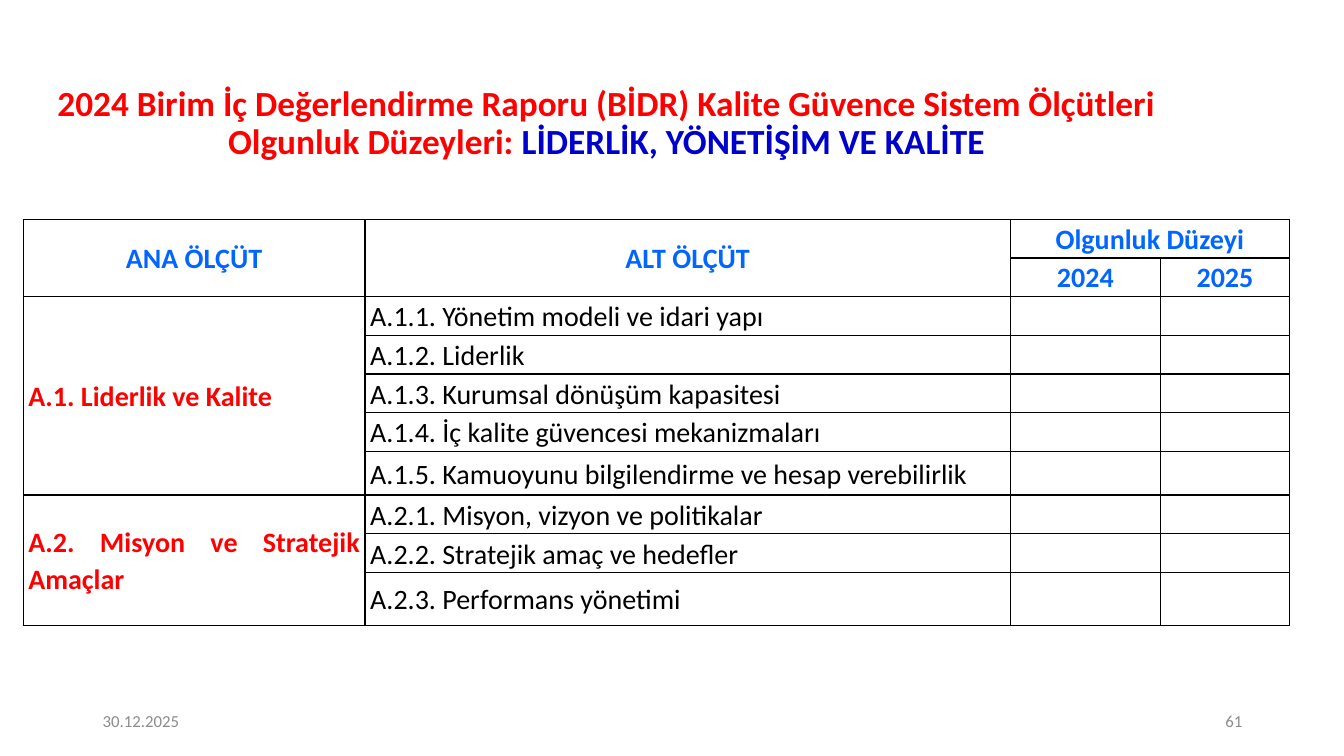
from typing import NamedTuple

from lxml import etree
from pptx import Presentation
from pptx import util as u
from pptx.dml.color import RGBColor
from pptx.enum import text as t
from pptx.oxml import ns

COLORS = {"red": "FF0000", "navy": "0000CC", "blue": "0066FF",
          "black": "000000", "grey": "8C8C8C"}
FONT = "Calibri"
WIDTH, HEIGHT = u.Inches(13.33), u.Inches(7.5)
CENTER, RIGHT, JUSTIFY, LEFT = (t.PP_ALIGN.CENTER, t.PP_ALIGN.RIGHT,
                                t.PP_ALIGN.JUSTIFY, t.PP_ALIGN.LEFT)


class Run(NamedTuple):
    text: str
    color: str
    size: float
    bold: bool = False


class Label(NamedTuple):
    """Text box; place is left, top, width, height in percent of the slide."""
    place: tuple[float, float, float, float]
    runs: list[Run]
    align: t.PP_ALIGN
    spacing: float = 1.0


class Criterion(NamedTuple):
    name: str
    items: list[str]


class Cell(NamedTuple):
    row: int
    col: int
    text: str
    color: str = "blue"
    bold: bool = True
    align: t.PP_ALIGN = CENTER
    rows: int = 1
    cols: int = 1


LABELS = [
    Label((2.7, 11.33, 84.85, 10.27),
          [Run("2024 Birim İç Değerlendirme Raporu (BİDR) Kalite Güvence Sistem "
               "Ölçütleri Olgunluk Düzeyleri: ", "red", 25.2, True),
           Run("LİDERLİK, YÖNETİŞİM VE KALİTE", "navy", 25.2, True)], CENTER, 0.9),
    Label((6.9, 92.67, 22.5, 5.33), [Run("30.12.2025", "grey", 12)], LEFT),
    Label((70.67, 92.67, 22.5, 5.33), [Run("61", "grey", 12)], RIGHT),
]

HEADERS = [
    Cell(0, 0, "ANA ÖLÇÜT", rows=2),
    Cell(0, 1, "ALT ÖLÇÜT", rows=2),
    Cell(0, 2, "Olgunluk Düzeyi", cols=2),
    Cell(1, 2, "2024"),
    Cell(1, 3, "2025"),
]

CRITERIA = [
    Criterion("A.1. Liderlik ve Kalite", [
        "A.1.1. Yönetim modeli ve idari yapı",
        "A.1.2. Liderlik",
        "A.1.3. Kurumsal dönüşüm kapasitesi",
        "A.1.4. İç kalite güvencesi mekanizmaları",
        "A.1.5. Kamuoyunu bilgilendirme ve hesap verebilirlik"]),
    Criterion("A.2. Misyon ve Stratejik Amaçlar", [
        "A.2.1. Misyon, vizyon ve politikalar",
        "A.2.2. Stratejik amaç ve hedefler",
        "A.2.3. Performans yönetimi"]),
]

# Percent of the slide's width and height
TABLE_LEFT, TABLE_TOP = 1.73, 29.07
COL_SHARES = [25.43, 48.01, 11.18, 9.6]
ROW_SHARES = [5.07] * 2 + [5.13] * 4 + [5.77] + [5.13] * 2 + [6.97]


def across(percent: float) -> int:
    return round(WIDTH * percent / 100)


def down(percent: float) -> int:
    return round(HEIGHT * percent / 100)


def add_run(p, run: Run) -> None:
    r = p.add_run()
    r.text = run.text
    r.font.name = FONT
    r.font.size = u.Pt(run.size)
    r.font.bold = run.bold
    r.font.color.rgb = RGBColor.from_string(COLORS[run.color])


def add_label(s, label: Label) -> None:
    x, y, w, h = label.place
    tf = s.shapes.add_textbox(across(x), down(y), across(w), down(h)).text_frame
    tf.word_wrap = True
    tf.vertical_anchor = t.MSO_ANCHOR.MIDDLE
    p = tf.paragraphs[0]
    p.alignment = label.align
    p.line_spacing = label.spacing
    for run in label.runs:
        add_run(p, run)


def style_cell(cell) -> None:
    """Set insets, thin black borders and no fill."""
    cell.margin_left = cell.margin_right = u.Inches(0.05)
    cell.margin_top = cell.margin_bottom = 0
    cell.vertical_anchor = t.MSO_ANCHOR.MIDDLE
    tc_pr = cell._tc.get_or_add_tcPr()
    for side in ("lnL", "lnR", "lnT", "lnB"):
        ln = etree.SubElement(tc_pr, ns.qn(f"a:{side}"), w=str(u.Pt(1)))
        fill = etree.SubElement(ln, ns.qn("a:solidFill"))
        etree.SubElement(fill, ns.qn("a:srgbClr"), val=COLORS["black"])
    cell.fill.background()


def criterion_cells() -> list[Cell]:
    cells, row = [], 2
    for criterion in CRITERIA:
        cells.append(Cell(row, 0, criterion.name, "red", True, JUSTIFY,
                          rows=len(criterion.items)))
        for item in criterion.items:
            cells.append(Cell(row, 1, item, "black", False, JUSTIFY))
            row += 1
    return cells


def add_criteria_table(s) -> None:
    table = s.shapes.add_table(
        len(ROW_SHARES), len(COL_SHARES), across(TABLE_LEFT), down(TABLE_TOP),
        across(sum(COL_SHARES)), down(sum(ROW_SHARES))).table
    table.first_row = table.horz_banding = False
    for col, share in zip(table.columns, COL_SHARES):
        col.width = across(share)
    for row, share in zip(table.rows, ROW_SHARES):
        row.height = down(share)
    for cell in table.iter_cells():
        style_cell(cell)
    for c in HEADERS + criterion_cells():
        cell = table.cell(c.row, c.col)
        if c.rows > 1 or c.cols > 1:
            cell.merge(table.cell(c.row + c.rows - 1, c.col + c.cols - 1))
        p = cell.text_frame.paragraphs[0]
        p.alignment = c.align
        p.line_spacing = 1.07
        add_run(p, Run(c.text, c.color, 20, c.bold))


def main() -> None:
    prs = Presentation()
    prs.slide_width, prs.slide_height = WIDTH, HEIGHT
    s = prs.slides.add_slide(prs.slide_layouts[6])
    for label in LABELS:
        add_label(s, label)
    add_criteria_table(s)
    prs.save("out.pptx")


if __name__ == "__main__":
    main()
